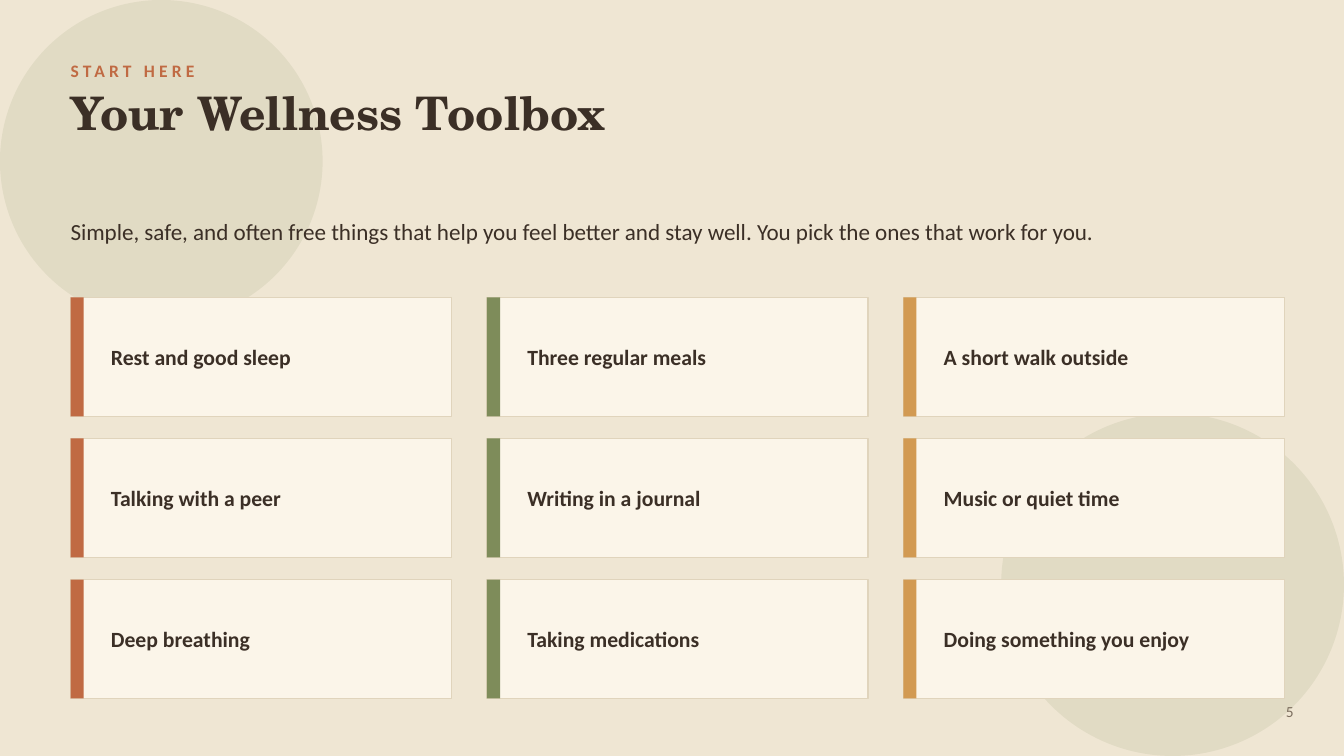
from lxml import etree
from pptx import Presentation
from pptx.dml.color import RGBColor
from pptx.enum.shapes import MSO_SHAPE
from pptx.enum.text import MSO_ANCHOR, MSO_AUTO_SIZE, PP_ALIGN
from pptx.oxml.ns import qn
from pptx.util import Inches, Pt

RECT, OVAL = MSO_SHAPE.RECTANGLE, MSO_SHAPE.OVAL
TOP, MIDDLE = MSO_ANCHOR.TOP, MSO_ANCHOR.MIDDLE
LEFT, RIGHT = PP_ALIGN.LEFT, PP_ALIGN.RIGHT
NO_AUTOFIT = MSO_AUTO_SIZE.NONE

SAND = RGBColor(0xEF, 0xE6, 0xD3)
CREAM = RGBColor(0xFB, 0xF5, 0xE9)
BORDER = RGBColor(0xE0, 0xD4, 0xBC)
BROWN = RGBColor(0x3B, 0x2F, 0x26)
TAUPE = RGBColor(0x7C, 0x6E, 0x5E)
CLAY = RGBColor(0xC0, 0x6A, 0x43)
OLIVE = RGBColor(0x7E, 0x8C, 0x5A)
OCHRE = RGBColor(0xD2, 0x9A, 0x52)

BODY_FONT, TITLE_FONT = "Calibri", "TeX Gyre Schola"

MARGIN, GRID_TOP = 0.7, 2.95
CARD_W, CARD_H = 3.78, 1.18
COLUMN_STEP, ROW_STEP = 4.13, 1.4
COLUMN_COLORS = (CLAY, OLIVE, OCHRE)
TOOLS = (
    ("Rest and good sleep", "Three regular meals", "A short walk outside"),
    ("Talking with a peer", "Writing in a journal", "Music or quiet time"),
    ("Deep breathing", "Taking medications", "Doing something you enjoy"),
)


def write_text(sp, text, size, font=BODY_FONT, color=BROWN, bold=False,
               anchor=MIDDLE, align=LEFT, inset=0, line_spacing=None,
               tracking=None):
    """Fill a shape with one formatted paragraph; tracking is in points."""
    tf = sp.text_frame
    tf.word_wrap = True
    tf.auto_size = NO_AUTOFIT
    tf.vertical_anchor = anchor
    tf.margin_left = tf.margin_right = Inches(inset)
    tf.margin_top = tf.margin_bottom = Inches(inset / 2)
    p = tf.paragraphs[0]
    p.alignment = align
    if line_spacing:
        p.line_spacing = Pt(line_spacing)
    r = p.add_run()
    r.text = text
    r.font.size = Pt(size)
    r.font.name = font
    r.font.bold = bold
    r.font.color.rgb = color
    if tracking:
        r.font._element.set("spc", str(tracking * 100))


def add_text(s, x, y, w, h, text, size, **fmt):
    sp = s.shapes.add_textbox(Inches(x), Inches(y), Inches(w), Inches(h))
    write_text(sp, text, size, **fmt)


def add_block(s, kind, x, y, w, h, fill, line=None, opacity=None):
    """Add a flat preset shape; opacity is a percentage."""
    sp = s.shapes.add_shape(kind, Inches(x), Inches(y), Inches(w), Inches(h))
    sp.shadow.inherit = False
    sp.fill.solid()
    sp.fill.fore_color.rgb = fill
    if opacity:
        color = sp.element.spPr.find(".//" + qn("a:srgbClr"))
        etree.SubElement(color, qn("a:alpha")).set("val", str(opacity * 1000))
    if line:
        sp.line.color.rgb = line
        sp.line.width = Pt(1)
    else:
        sp.line.fill.background()


def add_title(s, text):
    title = s.shapes.title
    title.left, title.top = Inches(MARGIN), Inches(0.84)
    title.width, title.height = Inches(11.9), Inches(1)
    write_text(title, text, 33, font=TITLE_FONT, bold=True, anchor=TOP)
    # Bring the title in front of the background circles
    title.element.getparent().append(title.element)


def add_card(s, x, y, text, accent):
    add_block(s, RECT, x, y, CARD_W, CARD_H, CREAM, line=BORDER)
    add_block(s, RECT, x, y, 0.13, CARD_H, accent)
    add_text(s, x + 0.4, y, CARD_W - 0.6, CARD_H, text, 15.5, bold=True)


def main():
    prs = Presentation()
    prs.slide_width, prs.slide_height = Inches(13.33), Inches(7.5)
    s = prs.slides.add_slide(prs.slide_layouts[5])
    s.background.fill.solid()
    s.background.fill.fore_color.rgb = SAND

    add_block(s, OVAL, 0, 0, 3.2, 3.2, OLIVE, opacity=12)
    add_block(s, OVAL, 9.93, 4.1, 3.4, 3.4, OLIVE, opacity=12)
    add_text(s, MARGIN, 0.5, 9, 0.4, "START HERE", 12.5, color=CLAY,
             bold=True, tracking=3)
    add_title(s, "Your Wellness Toolbox")
    add_text(s, MARGIN, 1.92, 11.6, 0.7,
             "Simple, safe, and often free things that help you feel better "
             "and stay well. You pick the ones that work for you.",
             16.5, line_spacing=23)

    for row, tools in enumerate(TOOLS):
        for col, (tool, accent) in enumerate(zip(tools, COLUMN_COLORS)):
            add_card(s, MARGIN + col * COLUMN_STEP, GRID_TOP + row * ROW_STEP,
                     tool, accent)

    add_text(s, 12.43, 6.88, 0.5, 0.35, "5", 11, color=TAUPE, align=RIGHT,
             inset=0.1)
    prs.save("out.pptx")


if __name__ == "__main__":
    main()
